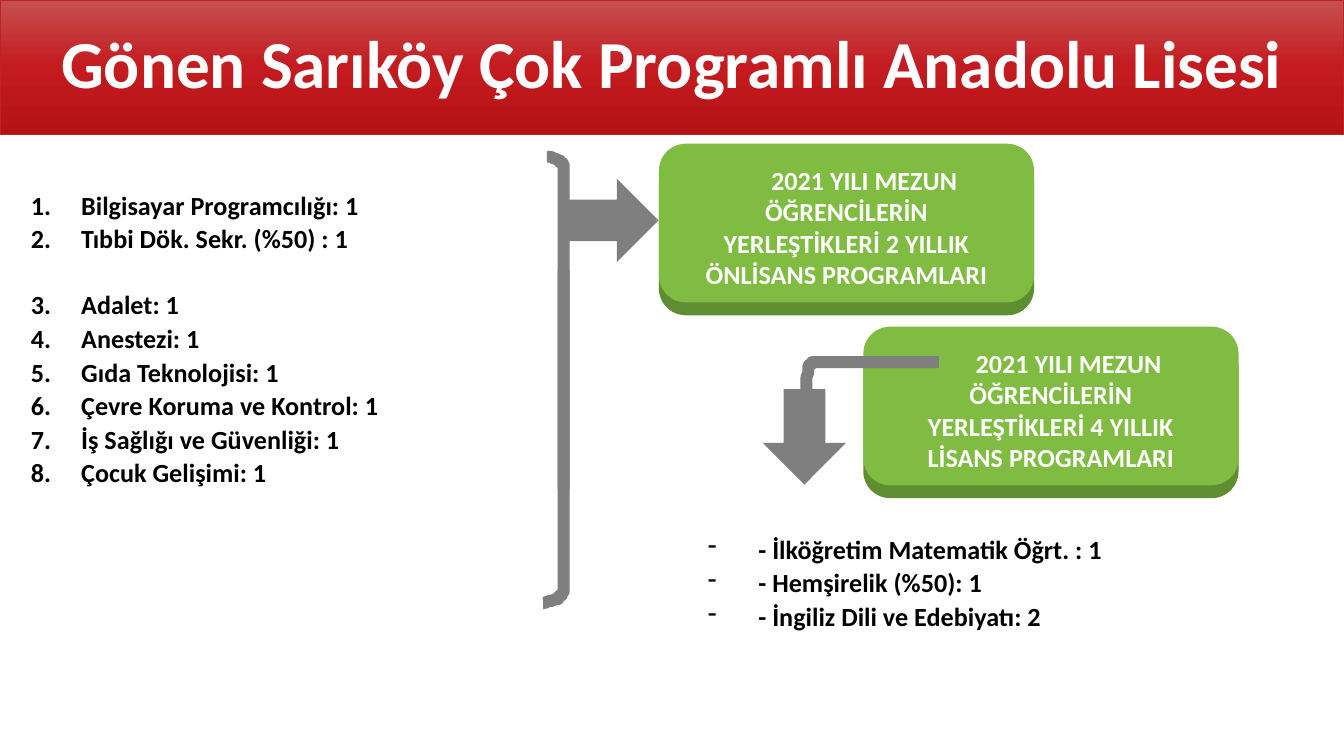
"""Build the slide on the 2021 placements of a high school's graduates."""
import copy
import math

from lxml import etree
from pptx import Presentation
from pptx.dml.color import RGBColor
from pptx.enum.shapes import MSO_SHAPE
from pptx.enum.text import MSO_ANCHOR, MSO_AUTO_SIZE, PP_ALIGN
from pptx.oxml.ns import qn
from pptx.util import Pt

RIGHT_ARROW = MSO_SHAPE.RIGHT_ARROW
ROUNDED = MSO_SHAPE.ROUNDED_RECTANGLE
CENTER = PP_ALIGN.CENTER
MIDDLE = MSO_ANCHOR.MIDDLE
NO_FIT = MSO_AUTO_SIZE.NONE
FONT = "Calibri"
COLORS = {
    "white": "FFFFFF", "black": "000000", "gray": "7F7F7F",
    "green": "7FBC41", "dark green": "5F8D31",
    "red top": "C65051", "red middle": "C31B1F", "red bottom": "B41215", "red edge": "BB2326",
}


def color(name):
    return RGBColor.from_string(COLORS[name])


def add_span(para, text, size, tint):
    span = para.add_run()
    span.text = text
    span.font.name = FONT
    span.font.size = Pt(size)
    span.font.bold = True
    span.font.color.rgb = color(tint)


deck = Presentation()
deck.slide_width, deck.slide_height = Pt(720), Pt(405)
slide = deck.slides.add_slide(deck.slide_layouts[5])
shapes = slide.shapes

title = shapes.title
title.left, title.top, title.width, title.height = Pt(0), Pt(0), Pt(720), Pt(72)
title.fill.gradient()
title.fill.gradient_angle = 270
stop_list = title._element.spPr.find(qn("a:gradFill")).find(qn("a:gsLst"))
stop_list.insert(1, copy.deepcopy(stop_list[0]))
for stop, position, tint in zip(title.fill.gradient_stops, (0, 0.5, 1),
                                ("red top", "red middle", "red bottom")):
    stop.position = position
    stop.color.rgb = color(tint)
title.line.color.rgb = color("red edge")
title.line.width = Pt(0.5)
title.text_frame.auto_size = NO_FIT
title.text_frame.vertical_anchor = MIDDLE
para = title.text_frame.paragraphs[0]
para.alignment = CENTER
para.line_spacing = 0.9
add_span(para, "Gönen Sarıköy Çok Programlı Anadolu Lisesi", 36, "white")

cards = [
    (353, 77, "2021 YILI MEZUN ÖĞRENCİLERİN YERLEŞTİKLERİ 2 YILLIK ÖNLİSANS PROGRAMLARI"),
    (462.5, 175, "2021 YILI MEZUN ÖĞRENCİLERİN YERLEŞTİKLERİ 4 YILLIK LİSANS PROGRAMLARI"),
]
for left, top, text in cards:
    for drop, tint in ((6.9, "dark green"), (0, "green")):
        card = shapes.add_shape(ROUNDED, Pt(left), Pt(top + drop), Pt(201), Pt(85))
        card.adjustments[0] = 0.17
        card.shadow.inherit = False
        card.fill.solid()
        card.fill.fore_color.rgb = color(tint)
        card.line.fill.background()
    box = shapes.add_textbox(Pt(left + 14), Pt(top + 7.5), Pt(173), Pt(75))
    box.text_frame.word_wrap = True
    para = box.text_frame.paragraphs[0]
    para.alignment = CENTER
    para._p.get_or_add_pPr().set("indent", str(Pt(19)))
    add_span(para, text, 14, "white")

for left, top, turn in ((301.7, 95.8, 0), (405.4, 211.7, 90)):
    arrow = shapes.add_shape(RIGHT_ARROW, Pt(left), Pt(top), Pt(51.1), Pt(44.6))
    arrow.rotation = turn
    arrow.shadow.inherit = False
    arrow.fill.solid()
    arrow.fill.fore_color.rgb = color("gray")
    arrow.line.fill.background()

hooks = [
    ((302.4, 262), (302.4, 90.7), (293, 84.2)),
    ((301.7, 144.7), (301.7, 316), (290.9, 322.6)),
    ((502.6, 194.4), (434.9, 194.4), (432, 208.8)),
]
for start, bend, end in hooks:
    points = []
    for step in range(1, 13):
        angle = step * math.pi / 24
        along, across = math.sin(angle), 1 - math.cos(angle)
        if start[0] == bend[0]:
            along, across = across, along
        points.append((bend[0] + (end[0] - bend[0]) * along,
                       bend[1] + (end[1] - bend[1]) * across))
    builder = shapes.build_freeform(*start, scale=Pt(1))
    builder.add_line_segments([bend, *points], close=False)
    hook = builder.convert_to_shape()
    hook.shadow.inherit = False
    hook.fill.background()
    hook.line.color.rgb = color("gray")
    hook.line.width = Pt(6.38)

lists = [
    (9.4, 97.2, 259, 153, "buAutoNum", {"type": "arabicPeriod"}, [
        "Bilgisayar Programcılığı: 1", "Tıbbi Dök. Sekr. (%50) : 1", "Adalet: 1",
        "Anestezi: 1", "Gıda Teknolojisi: 1", "Çevre Koruma ve Kontrol: 1",
        "İş Sağlığı ve Güvenliği: 1", "Çocuk Gelişimi: 1"]),
    (372.2, 281.5, 261, 61, "buChar", {"char": "-"}, [
        "- İlköğretim Matematik Öğrt. : 1", "- Hemşirelik (%50): 1",
        "- İngiliz Dili ve Edebiyatı: 2"]),
]
for left, top, width, height, bullet, settings, items in lists:
    box = shapes.add_textbox(Pt(left), Pt(top), Pt(width), Pt(height))
    frame = box.text_frame
    frame.word_wrap = True
    for index, item in enumerate(items):
        para = frame.paragraphs[0] if index == 0 else frame.add_paragraph()
        props = para._p.get_or_add_pPr()
        props.set("marL", str(Pt(27)))
        props.set("indent", str(-Pt(27)))
        etree.SubElement(props, qn("a:" + bullet), settings)
        if item != "Çocuk Gelişimi: 1":
            para.line_spacing = 1.03
        if index:
            para.space_before = Pt(18 if item == "Adalet: 1" else 0.8)
        add_span(para, item, 14, "black")

deck.save("out.pptx")
